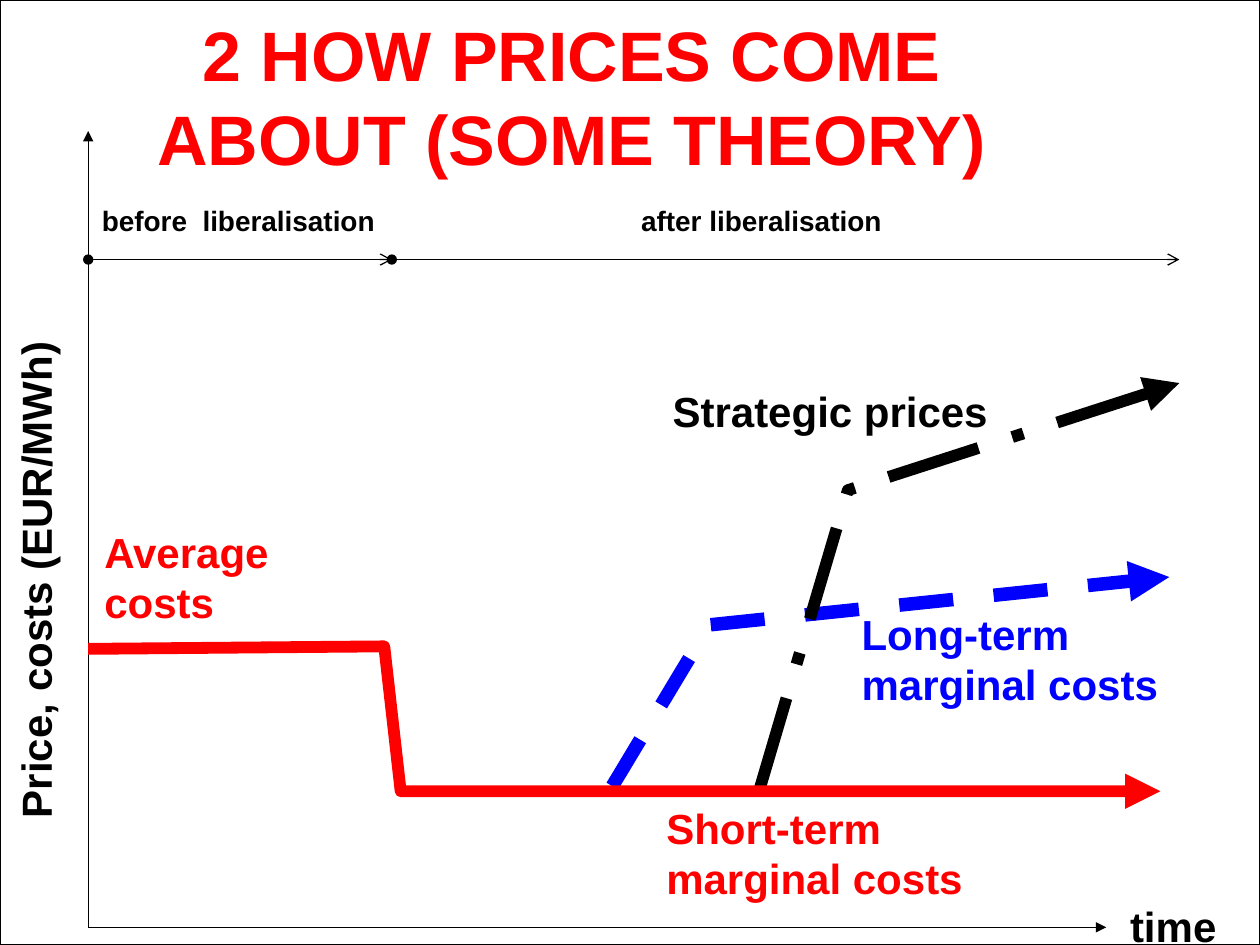
from pptx import Presentation
from pptx.dml.color import RGBColor
from pptx.enum.dml import MSO_LINE_DASH_STYLE as Dash
from pptx.enum.shapes import MSO_CONNECTOR, MSO_SHAPE
from pptx.enum.text import MSO_ANCHOR, MSO_AUTO_SIZE, PP_ALIGN
from pptx.oxml.ns import qn
from pptx.util import Inches, Pt
from lxml.etree import SubElement

BLACK = RGBColor(0, 0, 0)
WHITE = RGBColor(255, 255, 255)
RED = RGBColor(255, 0, 0)
BLUE = RGBColor(0, 0, 255)


class PriceSlide:
    font_name = "Arial"
    label_size = 24
    thin = 0.75

    def __init__(self, presentation):
        self.slide = presentation.slides.add_slide(presentation.slide_layouts[5])
        self.shapes = self.slide.shapes

    def format_text(self, text_frame, size, color):
        for paragraph in text_frame.paragraphs:
            for run in paragraph.runs:
                run.font.name = self.font_name
                run.font.size = Pt(size)
                run.font.bold = True
                run.font.color.rgb = color

    def style_line(self, shape, color, width, head=None, tail=None, dash=None):
        """Colour the outline and put line ends on its first and last point."""
        shape.line.color.rgb = color
        shape.line.width = Pt(width)
        if dash:
            shape.line.dash_style = dash
        line = shape.line._get_or_add_ln()
        for tag, end in (("a:headEnd", head), ("a:tailEnd", tail)):
            if end:
                SubElement(line, qn(tag)).set("type", end)

    def frame(self, width, height):
        shape = self.shapes.add_shape(MSO_SHAPE.RECTANGLE, 0, 0, width, height)
        shape.shadow.inherit = False
        shape.fill.solid()
        shape.fill.fore_color.rgb = WHITE
        self.style_line(shape, BLACK, self.thin)

    def title(self, text, left, top, width, height):
        """Fill the title placeholder and bring it in front of the frame."""
        title = self.shapes.title
        title.left, title.top = Inches(left), Inches(top)
        title.width, title.height = Inches(width), Inches(height)
        text_frame = title.text_frame
        text_frame.text = text
        text_frame.word_wrap = True
        text_frame.auto_size = MSO_AUTO_SIZE.NONE
        text_frame.vertical_anchor = MSO_ANCHOR.MIDDLE
        text_frame.paragraphs[0].alignment = PP_ALIGN.CENTER
        self.format_text(text_frame, 40, RED)
        self.shapes._spTree.append(title._element)

    def label(self, text, left, top, width, height=0.5, color=BLACK,
              size=label_size, rotation=0):
        box = self.shapes.add_textbox(Inches(left), Inches(top),
                                      Inches(width), Inches(height))
        box.rotation = rotation
        text_frame = box.text_frame
        text_frame.text = text
        text_frame.word_wrap = False
        text_frame.auto_size = MSO_AUTO_SIZE.SHAPE_TO_FIT_TEXT
        self.format_text(text_frame, size, color)

    def arrow(self, start, end, head=None, tail="triangle"):
        connector = self.shapes.add_connector(
            MSO_CONNECTOR.STRAIGHT, *map(Inches, start + end))
        self.style_line(connector, BLACK, self.thin, head, tail)
        SubElement(connector._element.spPr, qn("a:effectLst"))

    def curve(self, points, color, width=6.75, dash=None):
        start, *rest = [(Inches(x), Inches(y)) for x, y in points]
        builder = self.shapes.build_freeform(*start)
        builder.add_line_segments(rest, close=False)
        shape = builder.convert_to_shape()
        shape.shadow.inherit = False
        shape.fill.background()
        self.style_line(shape, color, width, tail="triangle", dash=dash)


def main():
    presentation = Presentation()
    presentation.slide_width = Inches(10)
    presentation.slide_height = Inches(7.5)
    page = PriceSlide(presentation)
    page.frame(presentation.slide_width, presentation.slide_height)

    axis_x, axis_y = 0.7, 7.36
    period_y, liberalisation_x, period_end = 2.06, 3.11, 9.36

    page.curve([(4.86, 6.24), (5.63, 4.96), (9.28, 4.58)], BLUE, 7.75, Dash.DASH)
    page.label("Short-term \vmarginal costs", 5.19, 6.32, 2.67, 0.91, RED)
    page.label("Long-term \vmarginal costs", 6.74, 4.78, 2.76, 0.91, BLUE)
    page.label("Average\ncosts", 0.73, 4.13, 1.61, 0.91, RED)

    page.label("Price, costs (EUR/MWh)", -1.73, 4.33, 4.02, rotation=270)
    page.arrow((axis_x, axis_y), (8.78, axis_y))
    page.label("time", 8.87, 7.1, 0.99)
    page.arrow((axis_x, axis_y), (axis_x, 1.04))

    page.curve([(6.03, 6.26), (6.73, 3.89), (9.36, 3.04)], BLACK,
               dash=Dash.LONG_DASH_DOT)
    page.label("Strategic prices", 5.24, 3.01, 2.73)

    periods = [
        ("after liberalisation", liberalisation_x, period_end, 4.99, 2.14),
        ("before  liberalisation", axis_x, liberalisation_x, 0.71, 2.4),
    ]
    for text, start, end, left, width in periods:
        page.arrow((start, period_y), (end, period_y), "oval", "arrow")
        page.label(text, left, 1.57, width, 0.37, size=16)

    page.curve([(axis_x, 5.15), (3.05, 5.13), (3.18, 6.28), (9.21, 6.28)], RED)
    page.title("2 HOW PRICES COME \vABOUT (SOME THEORY) ", -0.51, 0.13, 10.25, 1.25)

    presentation.save("out.pptx")


if __name__ == "__main__":
    main()
